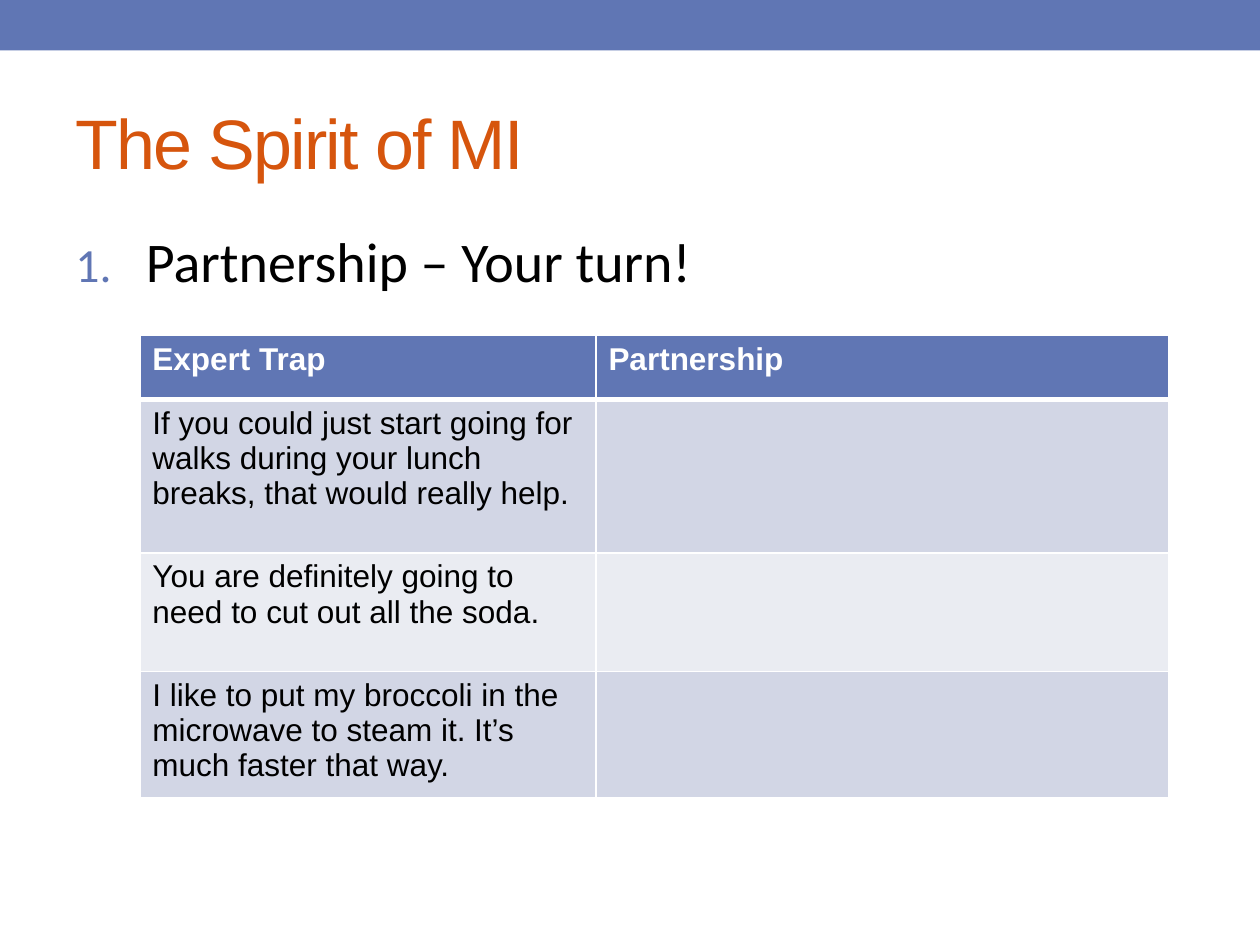
from dataclasses import dataclass

from lxml.etree import SubElement
from pptx import Presentation
from pptx.dml.color import RGBColor
from pptx.enum.shapes import MSO_SHAPE
from pptx.enum.text import MSO_ANCHOR, PP_ALIGN
from pptx.oxml.ns import qn
from pptx.util import Inches, Pt


@dataclass(frozen=True)
class Theme:
    blue: str = "6076B4"
    orange: str = "D6550D"
    black: str = "000000"
    white: str = "FFFFFF"
    bands: tuple = ("D2D6E5", "EAECF2")
    head: int = 40
    body: int = 32
    cell: int = 18
    sans: str = "Arial"
    text: str = "Calibri"


theme = Theme()


def add_run(para, text, size, color, font, bold=False):
    run = para.add_run()
    run.text = text
    run.font.size = Pt(size)
    run.font.name = font
    run.font.bold = bold
    run.font.color.rgb = RGBColor.from_string(color)
    return run


def add_edge(cell, side, width):
    line = SubElement(cell._tc.get_or_add_tcPr(), qn(f"a:ln{side}"), w=str(Pt(width)))
    fill = SubElement(line, qn("a:solidFill"))
    SubElement(fill, qn("a:srgbClr"), val=theme.white)


deck = Presentation()
deck.slide_width, deck.slide_height = Inches(10), Inches(7.5)
slide = deck.slides.add_slide(deck.slide_layouts[5])

# Top band
band = slide.shapes.add_shape(MSO_SHAPE.RECTANGLE, 0, 0, Inches(10), Inches(0.4))
band.shadow.inherit = False
band.fill.solid()
band.fill.fore_color.rgb = RGBColor.from_string(theme.blue)
band.line.fill.background()

# Title
title = slide.shapes.title
title.left, title.top = Inches(0.5), Inches(0.58)
title.width, title.height = Inches(9), Inches(1.08)
frame = title.text_frame
frame.vertical_anchor = MSO_ANCHOR.MIDDLE
para = frame.paragraphs[0]
para.alignment = PP_ALIGN.LEFT
run = add_run(para, "The Spirit of MI", theme.head, theme.orange, theme.sans)
run.font._element.set("spc", "-100")

# Numbered point
box = slide.shapes.add_textbox(Inches(0.5), Inches(1.75), Inches(6.01), Inches(5.33))
box.text_frame.word_wrap = True
para = box.text_frame.paragraphs[0]
para.space_before, para.space_after = Pt(3.5), Pt(10)
add_run(para, "Partnership – Your turn!", theme.body, theme.black, theme.text)
props = para._p.get_or_add_pPr()
props.set("marL", str(Inches(0.56)))
props.set("indent", str(-Inches(0.56)))
tint = SubElement(props, qn("a:buClr"))
SubElement(tint, qn("a:srgbClr"), val=theme.blue)
SubElement(props, qn("a:buSzPct"), val="85000")
SubElement(props, qn("a:buFont"), typeface=theme.text)
SubElement(props, qn("a:buAutoNum"), type="arabicPeriod")

# Table of traps and replies
rows = [
    ("Expert Trap", "Partnership"),
    ("If you could just start going for walks during your lunch breaks, "
     "that would really help.", ""),
    ("You are definitely going to need to cut out all the soda.", ""),
    ("I like to put my broccoli in the microwave to steam it. "
     "It’s much faster that way.", ""),
]
widths = [3.62, 4.55]
heights = [0.51, 1.22, 0.94, 0.94]
table = slide.shapes.add_table(
    len(rows), len(widths), Inches(1.11), Inches(2.66),
    Inches(sum(widths)), Inches(sum(heights))).table
for col, width in zip(table.columns, widths):
    col.width = Inches(width)
for r, (texts, height) in enumerate(zip(rows, heights)):
    table.rows[r].height = Inches(height)
    top = r == 0
    shade = theme.blue if top else theme.bands[(r - 1) % 2]
    color = theme.white if top else theme.black
    for c, text in enumerate(texts):
        cell = table.cell(r, c)
        for side in "LRTB":
            thick = (top and side == "B") or (r == 1 and side == "T")
            add_edge(cell, side, 3 if thick else 1)
        cell.fill.solid()
        cell.fill.fore_color.rgb = RGBColor.from_string(shade)
        if text:
            add_run(cell.text_frame.paragraphs[0], text, theme.cell, color,
                    theme.sans, top)

deck.save("out.pptx")
